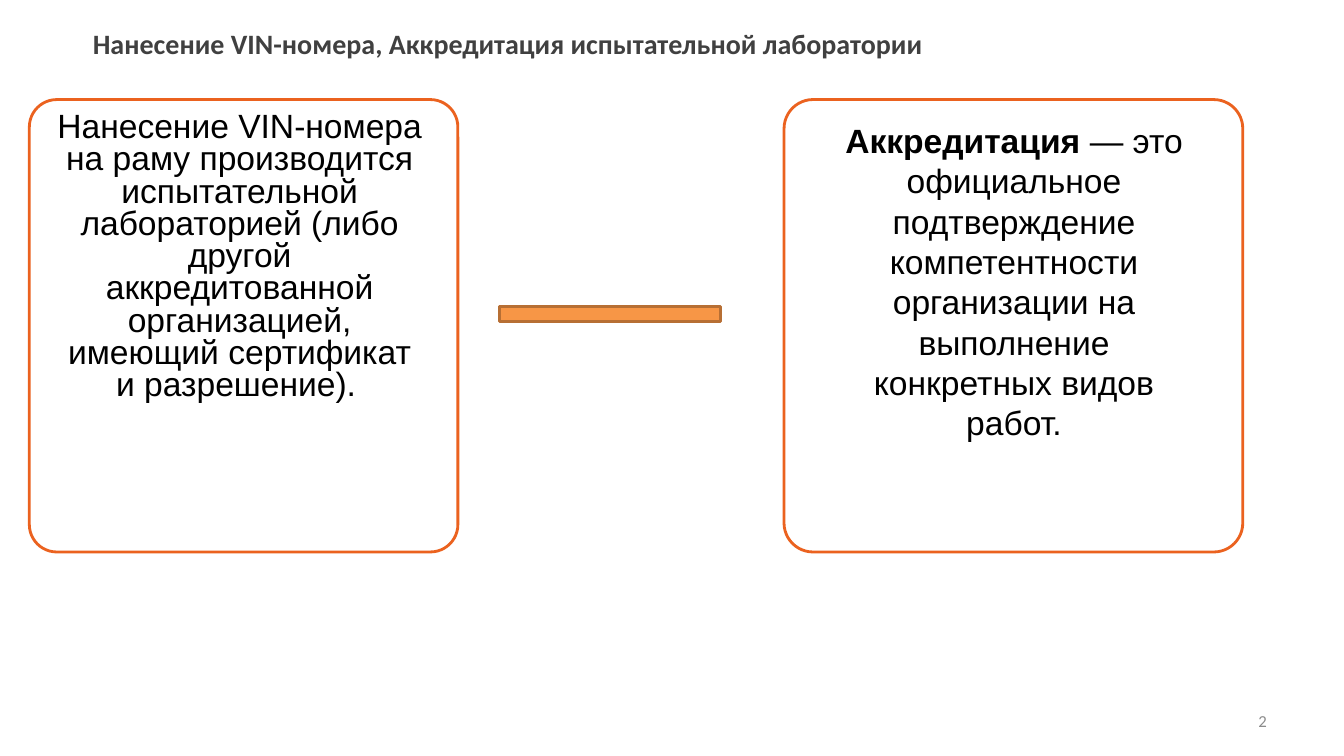
import pptx
import pptx.dml.color
import pptx.enum.shapes
import pptx.enum.text
import pptx.util

Cm = pptx.util.Cm
Pt = pptx.util.Pt
ALIGN = pptx.enum.text.PP_ALIGN
ANCHOR = pptx.enum.text.MSO_ANCHOR
SHAPE = pptx.enum.shapes.MSO_SHAPE


def color(hex_value):
    return pptx.dml.color.RGBColor.from_string(hex_value)


class SlideBuilder:
    body_font = "Arial"
    heading_font = "Calibri"
    text_color = "000000"
    frame_color = "EB621F"
    line_width = 2

    def __init__(self, slide):
        self.slide = slide

    def text(self, place, runs, font=body_font, hue=text_color, align=ALIGN.CENTER,
             anchor=ANCHOR.TOP, spacing=None, inset=True):
        """Add one paragraph; runs are (text, size, bold)."""
        box = self.slide.shapes.add_textbox(*map(Cm, place))
        frame = box.text_frame
        frame.word_wrap = True
        frame.vertical_anchor = anchor
        if not inset:
            frame.margin_left = frame.margin_right = 0
            frame.margin_top = frame.margin_bottom = 0
        paragraph = frame.paragraphs[0]
        paragraph.alignment = align
        if spacing:
            paragraph.line_spacing = spacing
        for words, size, bold in runs:
            run = paragraph.add_run()
            run.text = words
            run.font.name = font
            run.font.size = Pt(size)
            run.font.bold = bold
            run.font.color.rgb = color(hue)

    def shape(self, kind, place, line, fill=None):
        item = self.slide.shapes.add_shape(kind, *map(Cm, place))
        item.shadow.inherit = False
        if fill:
            item.fill.solid()
            item.fill.fore_color.rgb = color(fill)
        else:
            item.fill.background()
        item.line.color.rgb = color(line)
        item.line.width = Pt(self.line_width)
        return item

    def card(self, left, width):
        frame = self.shape(SHAPE.ROUNDED_RECTANGLE, (left, 2.51, width, 11.4),
                           self.frame_color)
        frame.adjustments[0] = 0.064


def main():
    deck = pptx.Presentation()
    deck.slide_width, deck.slide_height = Cm(33.87), Cm(19.05)
    builder = SlideBuilder(deck.slides.add_slide(deck.slide_layouts[6]))

    # Heading and page number
    builder.text((2.34, 0.15, 21.95, 1.98),
                 [("Нанесение VIN-номера, Аккредитация испытательной лаборатории", 20, True)],
                 font=builder.heading_font, hue="404040", align=ALIGN.LEFT,
                 anchor=ANCHOR.MIDDLE, spacing=0.9, inset=False)
    builder.text((24.28, 17.65, 7.9, 1.02), [("2", 12, False)],
                 font=builder.heading_font, hue="8C8C8C", align=ALIGN.RIGHT,
                 anchor=ANCHOR.MIDDLE)

    # VIN marking
    builder.card(0.74, 10.8)
    builder.text((1.14, 2.72, 9.8, 7.65),
                 [("Нанесение VIN-номера на раму производится испытательной лабораторией "
                   "(либо другой аккредитованной организацией, имеющий сертификат "
                   "и разрешение).", 24, False),
                  (" ", 18, False)], spacing=0.8)

    # Accreditation
    builder.text((20.68, 2.9, 9.75, 8.46),
                 [("Аккредитация\u00a0", 24, True),
                  ("— это официальное подтверждение компетентности организации "
                   "на выполнение конкретных видов работ.", 24, False)])
    builder.card(19.76, 11.56)

    # Dash between the two cards
    builder.shape(SHAPE.MATH_MINUS, (11.58, 7.14, 7.59, 1.55), "B76F34", fill="F79646")

    deck.save("out.pptx")


if __name__ == "__main__":
    main()
